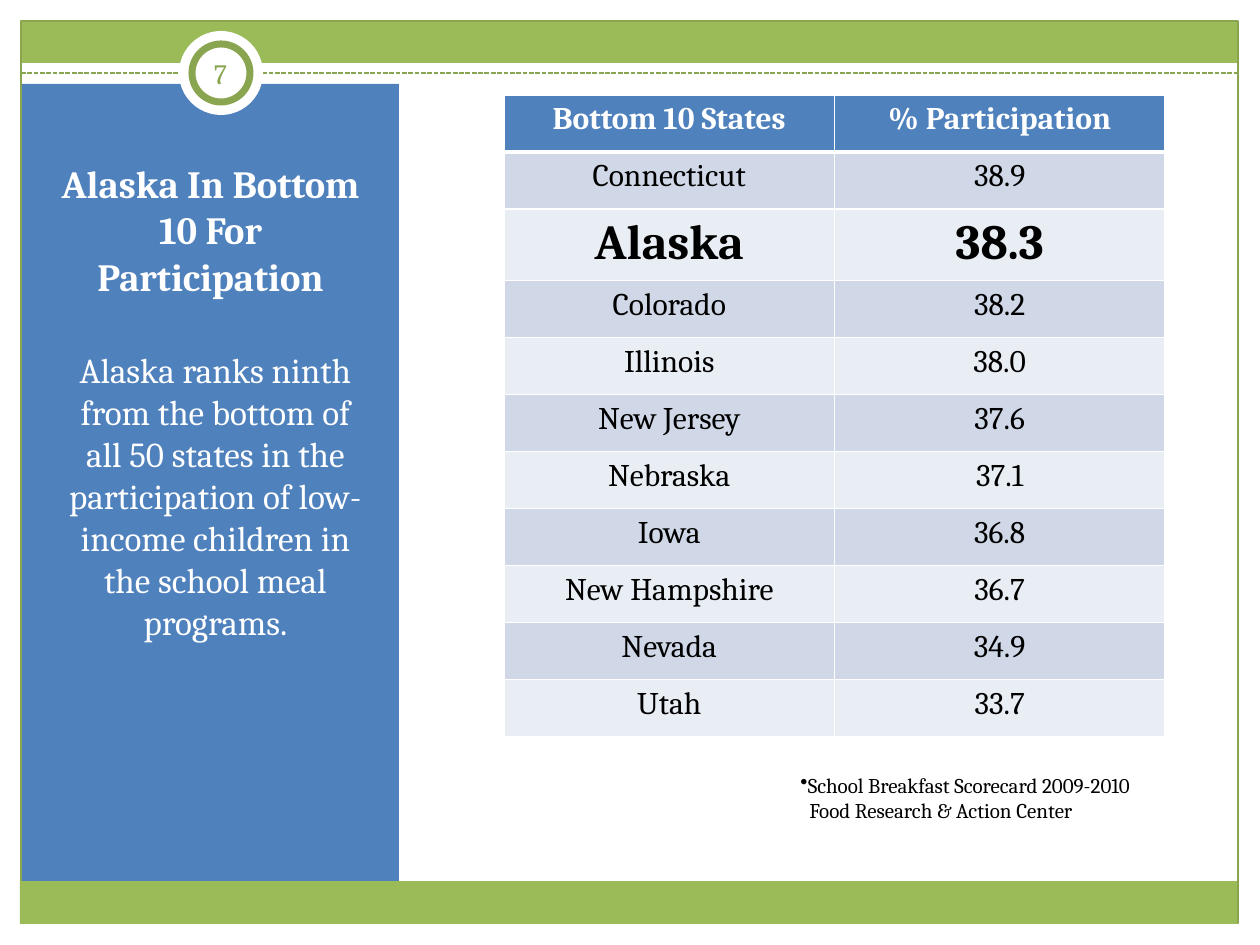
import pptx
import pptx.dml.color
import pptx.enum.dml
import pptx.enum.shapes
import pptx.enum.text
import pptx.oxml.ns
import pptx.util
from lxml import etree

RGBColor = pptx.dml.color.RGBColor
MSO_SHAPE = pptx.enum.shapes.MSO_SHAPE
ANCHOR = pptx.enum.text.MSO_ANCHOR
ALIGN = pptx.enum.text.PP_ALIGN

WHITE = RGBColor(0xFF, 0xFF, 0xFF)
BLACK = RGBColor(0, 0, 0)
GREEN = RGBColor(0x9B, 0xBB, 0x59)
DARK_GREEN = RGBColor(0x89, 0xA5, 0x4F)
BLUE = RGBColor(0x4F, 0x81, 0xBD)
BAND_DARK = RGBColor(0xD0, 0xD8, 0xE8)
BAND_LIGHT = RGBColor(0xE9, 0xED, 0xF4)

FONT = "Cambria"
PX_PER_INCH = 126
HIGHLIGHT = "Alaska"
HEADER = ("Bottom 10 States", "% Participation")
STATES = (
    ("Connecticut", "38.9"),
    ("Alaska", "38.3"),
    ("Colorado", "38.2"),
    ("Illinois", "38.0"),
    ("New Jersey", "37.6"),
    ("Nebraska", "37.1"),
    ("Iowa", "36.8"),
    ("New Hampshire", "36.7"),
    ("Nevada", "34.9"),
    ("Utah", "33.7"),
)


def px(length):
    return pptx.util.Emu(round(length * 914400 / PX_PER_INCH))


def box(*lengths):
    return [px(length) for length in lengths]


def add_element(parent, tag, **attributes):
    return etree.SubElement(parent, pptx.oxml.ns.qn(tag), attributes)


def add_panel(slide, kind, place, fill=None, line=None, line_width=0.75):
    shape = slide.shapes.add_shape(kind, *box(*place))
    shape.shadow.inherit = False
    if fill is None:
        shape.fill.background()
    else:
        shape.fill.solid()
        shape.fill.fore_color.rgb = fill
    if line is None:
        shape.line.fill.background()
    else:
        shape.line.color.rgb = line
        shape.line.width = pptx.util.Pt(line_width)


def add_dashed_rule(slide, left, right, y):
    rule = slide.shapes.add_connector(
        pptx.enum.shapes.MSO_CONNECTOR.STRAIGHT, *box(left, y, right, y))
    rule.line.color.rgb = DARK_GREEN
    rule.line.width = pptx.util.Pt(0.9)
    rule.line.dash_style = pptx.enum.dml.MSO_LINE.SQUARE_DOT
    add_element(rule.element.spPr, "a:effectLst")


def style_paragraph(paragraph, size, color, align=ALIGN.CENTER, bold=False):
    paragraph.alignment = align
    font = paragraph.font
    font.name, font.size, font.bold = FONT, pptx.util.Pt(size), bold
    font.color.rgb = color


def add_text(slide, place, text, size, color, align=ALIGN.CENTER, bold=False,
             anchor=ANCHOR.TOP):
    frame = slide.shapes.add_textbox(*box(*place)).text_frame
    frame.word_wrap = True
    frame.vertical_anchor = anchor
    frame.text = text
    for paragraph in frame.paragraphs:
        style_paragraph(paragraph, size, color, align, bold)
    return frame


def set_borders(cell, bottom_width):
    """Draw white borders; they must precede the fill in the cell properties."""
    properties = cell._tc.get_or_add_tcPr()
    widths = {"a:lnL": 1, "a:lnR": 1, "a:lnT": 1, "a:lnB": bottom_width}
    for tag, width in widths.items():
        line = add_element(properties, tag, w=str(pptx.util.Pt(width)))
        add_element(add_element(line, "a:solidFill"), "a:srgbClr", val=str(WHITE))


def add_participation_table(slide):
    rows = (HEADER, *STATES)
    row_height = 57
    table = slide.shapes.add_table(
        len(rows), len(HEADER), *box(504, 95, 661, row_height * len(rows))).table
    for row in table.rows:
        row.height = px(row_height)
    for row_index, values in enumerate(rows):
        is_header = row_index == 0
        is_highlight = values[0] == HIGHLIGHT
        band = BAND_DARK if row_index % 2 else BAND_LIGHT
        for column_index, value in enumerate(values):
            cell = table.cell(row_index, column_index)
            set_borders(cell, 3 if is_header else 1)
            cell.fill.solid()
            cell.fill.fore_color.rgb = BLUE if is_header else band
            cell.text = value
            style_paragraph(cell.text_frame.paragraphs[0],
                            28 if is_highlight else 18,
                            WHITE if is_header else BLACK,
                            bold=is_header or is_highlight)


def add_source_note(slide):
    frame = add_text(
        slide, (788, 766, 410, 63),
        "School Breakfast Scorecard 2009-2010\nFood Research & Action Center",
        12, BLACK, ALIGN.LEFT)
    first, second = (p._p.get_or_add_pPr() for p in frame.paragraphs)
    bullet = etree.Element(pptx.oxml.ns.qn("a:buChar"), char="•")
    first.insert_element_before(bullet, "a:tabLst", "a:defRPr", "a:extLst")
    second.set("marL", str(px(9)))


def add_page_badge(slide):
    add_panel(slide, MSO_SHAPE.OVAL, (179, 31, 84, 84), WHITE)
    add_panel(slide, MSO_SHAPE.OVAL, (192, 44, 58, 58), WHITE, DARK_GREEN, 4)


def add_page_number(slide, number):
    frame = add_text(slide, (189, 43, 63, 60), number, 16, DARK_GREEN,
                     anchor=ANCHOR.MIDDLE)
    frame.margin_left = frame.margin_right = px(6)


def main():
    presentation = pptx.Presentation()
    presentation.slide_width, presentation.slide_height = box(1260, 945)
    slide = presentation.slides.add_slide(presentation.slide_layouts[6])

    add_panel(slide, MSO_SHAPE.RECTANGLE, (21, 21, 1217, 42), GREEN)
    add_panel(slide, MSO_SHAPE.RECTANGLE, (21, 84, 378, 809), BLUE)
    add_panel(slide, MSO_SHAPE.RECTANGLE, (21, 21, 1217, 902), line=DARK_GREEN)
    add_dashed_rule(slide, 21, 1238, 73)
    add_page_badge(slide)
    add_panel(slide, MSO_SHAPE.RECTANGLE, (20, 881, 1217, 43), GREEN)

    add_text(slide, (32, 126, 357, 179),
             "Alaska In Bottom 10 For\vParticipation", 22, WHITE, bold=True,
             anchor=ANCHOR.BOTTOM)
    summary = add_text(
        slide, (53, 273, 325, 571),
        "Alaska ranks ninth from the bottom of all 50 states in the "
        "participation of low-income children in the school meal programs.",
        20, WHITE)
    summary.margin_top = px(75)
    add_participation_table(slide)
    add_source_note(slide)
    add_page_number(slide, "7")
    presentation.save("out.pptx")


if __name__ == "__main__":
    main()
